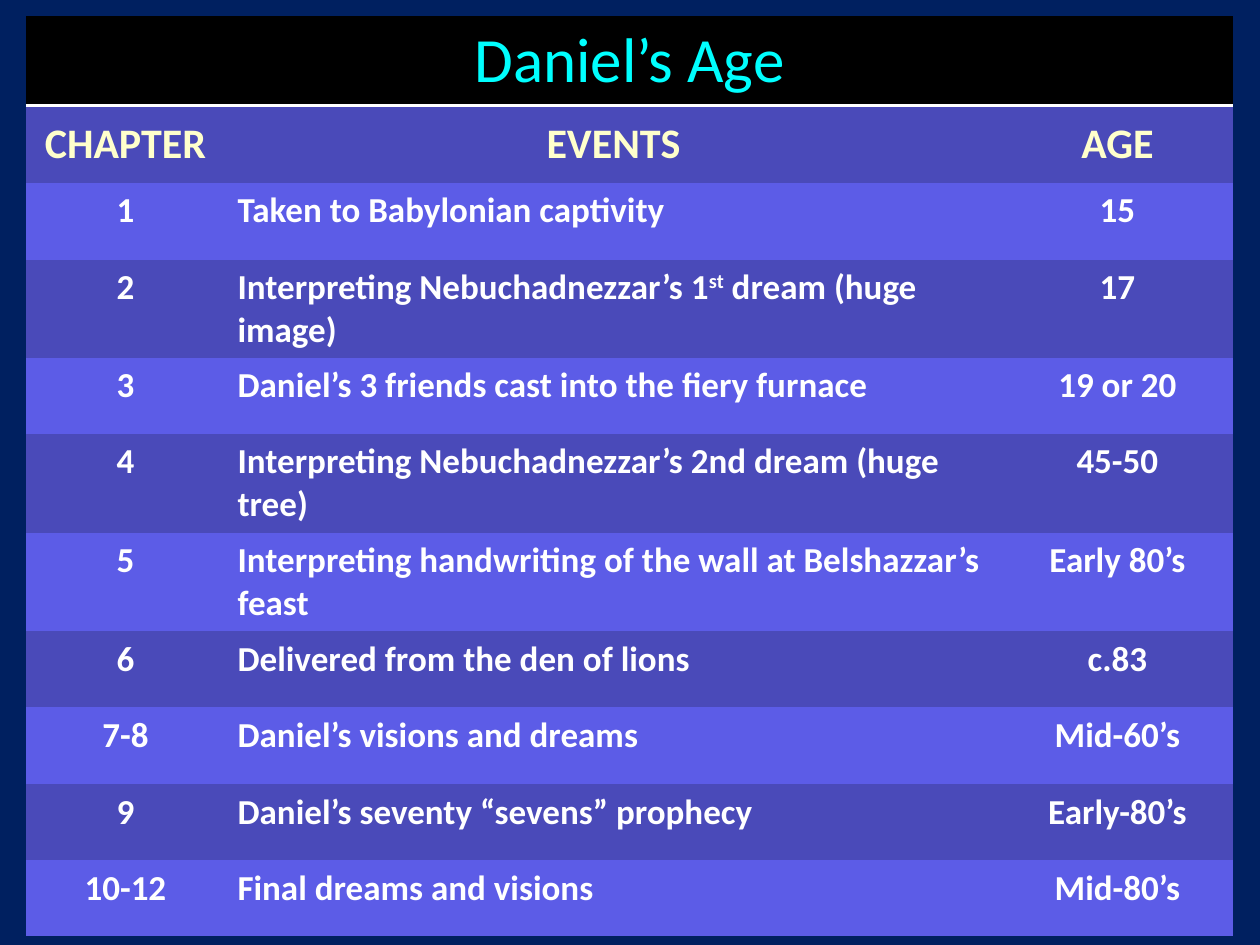
from lxml.etree import SubElement
from pptx import Presentation
from pptx.dml.color import RGBColor
from pptx.enum.text import MSO_ANCHOR, PP_ALIGN
from pptx.oxml.ns import qn
from pptx.util import Pt

PX = 914400 // 126
PLAIN_TABLE_STYLE = "{2D5ABB26-0587-4C30-8999-92F81FD0307C}"
DARK, LIGHT = "4A4AB9", "5C5CE7"
TABLE_BOX = (26, 16, 1207, 919)
COLUMN_WIDTHS = [199, 777, 231]
ROW_HEIGHTS = [89, 77, 77, 98, 76, 99, 98, 76, 77, 76, 76]
TITLE = "Daniel’s Age"
HEADINGS = ["CHAPTER", "EVENTS", "AGE"]
# An event given as a tuple holds text, superscript, text.
EVENTS = [
    ("1", "Taken to Babylonian captivity", "15"),
    ("2", ("Interpreting Nebuchadnezzar’s 1", "st", " dream (huge image)"), "17"),
    ("3", "Daniel’s 3 friends cast into the fiery furnace", "19 or 20"),
    ("4", "Interpreting Nebuchadnezzar’s 2nd dream (huge tree)", "45-50"),
    ("5", "Interpreting handwriting of the wall at Belshazzar’s feast", "Early 80’s"),
    ("6", "Delivered from the den of lions", "c.83"),
    ("7-8", "Daniel’s visions and dreams", "Mid-60’s"),
    ("9", "Daniel’s seventy “sevens” prophecy", "Early-80’s"),
    ("10-12", "Final dreams and visions", "Mid-80’s"),
]


def set_color(color_format, value):
    color_format.rgb = RGBColor.from_string(value)


def set_fill(fill, value):
    fill.solid()
    set_color(fill.fore_color, value)


def add_bottom_border(cell, value, points):
    properties = cell._tc.get_or_add_tcPr()
    line = properties.makeelement(qn("a:lnB"), {"w": str(Pt(points))})
    properties.insert(0, line)  # borders come before the fill
    solid = SubElement(line, qn("a:solidFill"))
    SubElement(solid, qn("a:srgbClr"), val=value)


def write_cell(cell, content, fill, color, size, bold=True, align=PP_ALIGN.CENTER):
    set_fill(cell.fill, fill)
    para = cell.text_frame.paragraphs[0]
    para.alignment = align
    parts = content if isinstance(content, tuple) else (content,)
    for index, text in enumerate(parts):
        span = para.add_run()
        span.text = text
        span.font.name = "Calibri"
        span.font.size = Pt(size)
        span.font.bold = bold
        set_color(span.font.color, color)
        if index == 1:
            span.font._element.set("baseline", "30000")


def add_age_table(page, box):
    frame = page.shapes.add_table(
        len(ROW_HEIGHTS), len(COLUMN_WIDTHS), *(length * PX for length in box)
    )
    table = frame.table
    table._tbl.tblPr.find(qn("a:tableStyleId")).text = PLAIN_TABLE_STYLE
    for column, width in zip(table.columns, COLUMN_WIDTHS):
        column.width = width * PX
    for row, height in zip(table.rows, ROW_HEIGHTS):
        row.height = height * PX

    title = table.cell(0, 0)
    title.merge(table.cell(0, len(COLUMN_WIDTHS) - 1))
    write_cell(title, TITLE, "000000", "00FFFF", 36, bold=False)
    for cell in table.rows[0].cells:
        add_bottom_border(cell, "FFFFFF", 2)

    for column, heading in enumerate(HEADINGS):
        cell = table.cell(1, column)
        write_cell(cell, heading, DARK, "FFFFCC", 24)
        cell.vertical_anchor = MSO_ANCHOR.MIDDLE

    for row, event in enumerate(EVENTS, start=2):
        fill = DARK if row % 2 else LIGHT
        for column, content in enumerate(event):
            align = PP_ALIGN.LEFT if column == 1 else PP_ALIGN.CENTER
            write_cell(table.cell(row, column), content, fill, "FFFFFF", 20, align=align)


def main():
    deck = Presentation()
    deck.slide_width, deck.slide_height = 1260 * PX, 945 * PX
    page = deck.slides.add_slide(deck.slide_layouts[6])
    set_fill(page.background.fill, "002060")
    add_age_table(page, TABLE_BOX)
    deck.save("out.pptx")


if __name__ == "__main__":
    main()
